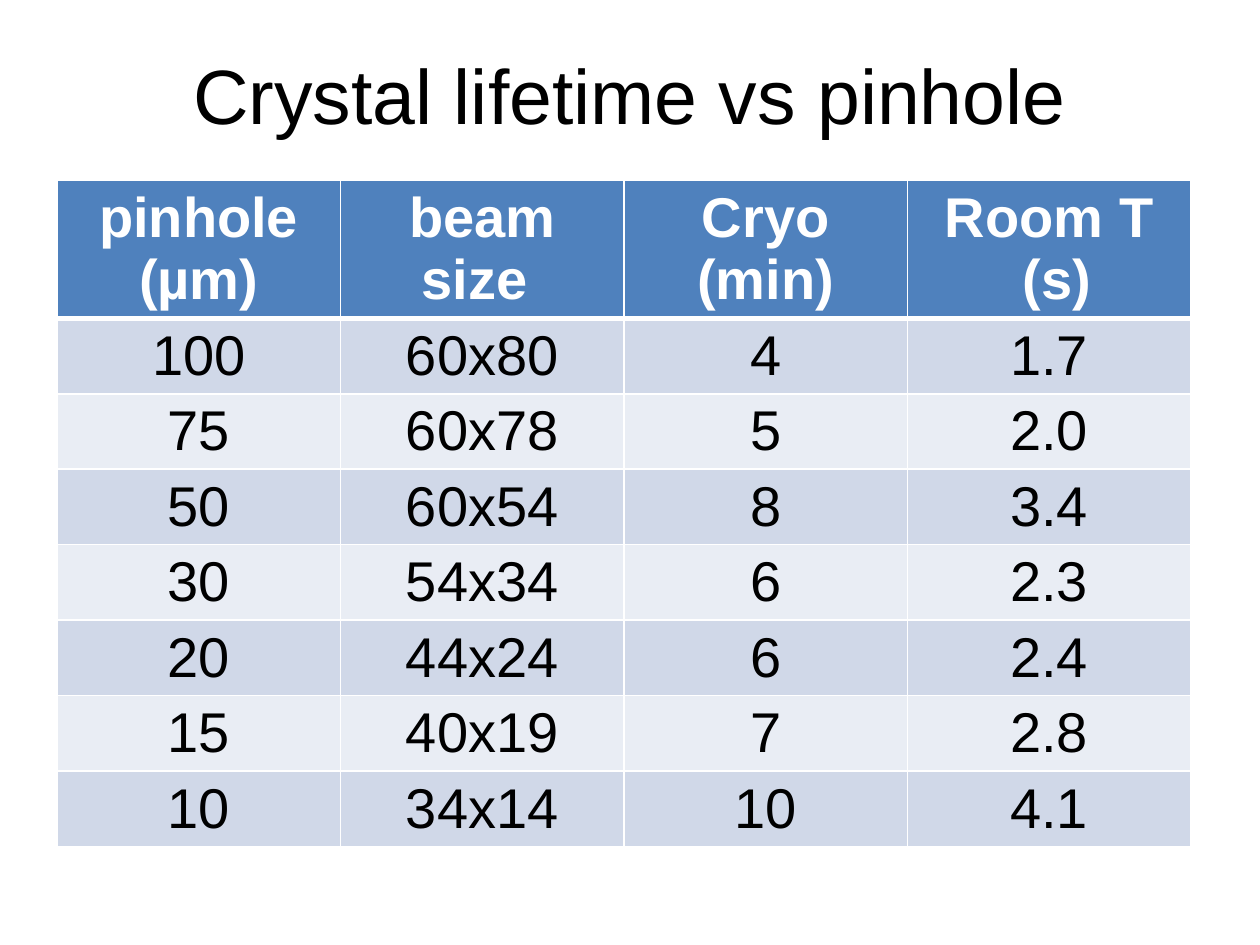
from lxml import etree
from pptx import Presentation
from pptx.dml.color import RGBColor
from pptx.enum.text import MSO_ANCHOR, PP_ALIGN
from pptx.oxml.ns import qn
from pptx.util import Cm, Pt

CENTER = PP_ALIGN.CENTER
MIDDLE = MSO_ANCHOR.MIDDLE
TITLE_ONLY = 5

COLORS = {
    "text": "000000",
    "white": "FFFFFF",
    "header": "4F81BD",
    "bands": ["D0D8E8", "E9EDF4"],
}
FORMATS = {
    "title": {"name": "Arial", "size": Pt(44), "bold": False},
    "header": {"name": "Arial", "size": Pt(32), "bold": True},
    "body": {"name": "Arial", "size": Pt(32), "bold": False},
}
ROWS = [
    ["pinhole\n(µm)", "beam size ", "Cryo (min)", "Room T\n (s)"],
    ["100", "60x80", "4", "1.7"],
    ["75", "60x78", "5", "2.0"],
    ["50", "60x54", "8", "3.4"],
    ["30", "54x34", "6", "2.3"],
    ["20", "44x24", "6", "2.4"],
    ["15", "40x19", "7", "2.8"],
    ["10", "34x14", "10", "4.1"],
]


def write_text(frame, text, style, color):
    frame.text = text
    for para in frame.paragraphs:
        para.alignment = CENTER
        for span in para.runs:
            for key, value in FORMATS[style].items():
                setattr(span.font, key, value)
            span.font.color.rgb = RGBColor.from_string(color)


def add_borders(cell, bottom_width):
    widths = {"lnL": 1, "lnR": 1, "lnT": 1, "lnB": bottom_width}
    properties = cell._tc.get_or_add_tcPr()
    for side, width in widths.items():
        line = etree.SubElement(properties, qn(f"a:{side}"), w=str(Pt(width)))
        fill = etree.SubElement(line, qn("a:solidFill"))
        etree.SubElement(fill, qn("a:srgbClr"), val=COLORS["white"])


deck = Presentation()
deck.slide_width, deck.slide_height = Cm(25.4), Cm(19.05)
page = deck.slides.add_slide(deck.slide_layouts[TITLE_ONLY])

# Title
title = page.shapes.title
title.left, title.top, title.width, title.height = Cm(1.27), Cm(0.3), Cm(22.86), Cm(3.18)
title.text_frame.vertical_anchor = MIDDLE
write_text(title.text_frame, "Crystal lifetime vs pinhole", "title", COLORS["text"])

# Table with a tall header row and equal body rows
column_count = len(ROWS[0])
header_height, body_height = Cm(2.74), Cm(1.52)
table_height = header_height + body_height * (len(ROWS) - 1)
table = page.shapes.add_table(
    len(ROWS), column_count, Cm(1.15), Cm(3.63), Cm(22.86), table_height
).table

for row_index, values in enumerate(ROWS):
    is_header = row_index == 0
    table.rows[row_index].height = header_height if is_header else body_height
    style = "header" if is_header else "body"
    text_color = COLORS["white"] if is_header else COLORS["text"]
    fill_color = COLORS["header"] if is_header else COLORS["bands"][(row_index - 1) % 2]
    for column_index, value in enumerate(values):
        cell = table.cell(row_index, column_index)
        add_borders(cell, 3 if is_header else 1)
        cell.fill.solid()
        cell.fill.fore_color.rgb = RGBColor.from_string(fill_color)
        write_text(cell.text_frame, value, style, text_color)
        # The rule under the header is shared with the first body row
        if row_index == 1:
            cell._tc.tcPr.find(qn("a:lnT")).set("w", str(Pt(3)))

deck.save("out.pptx")
